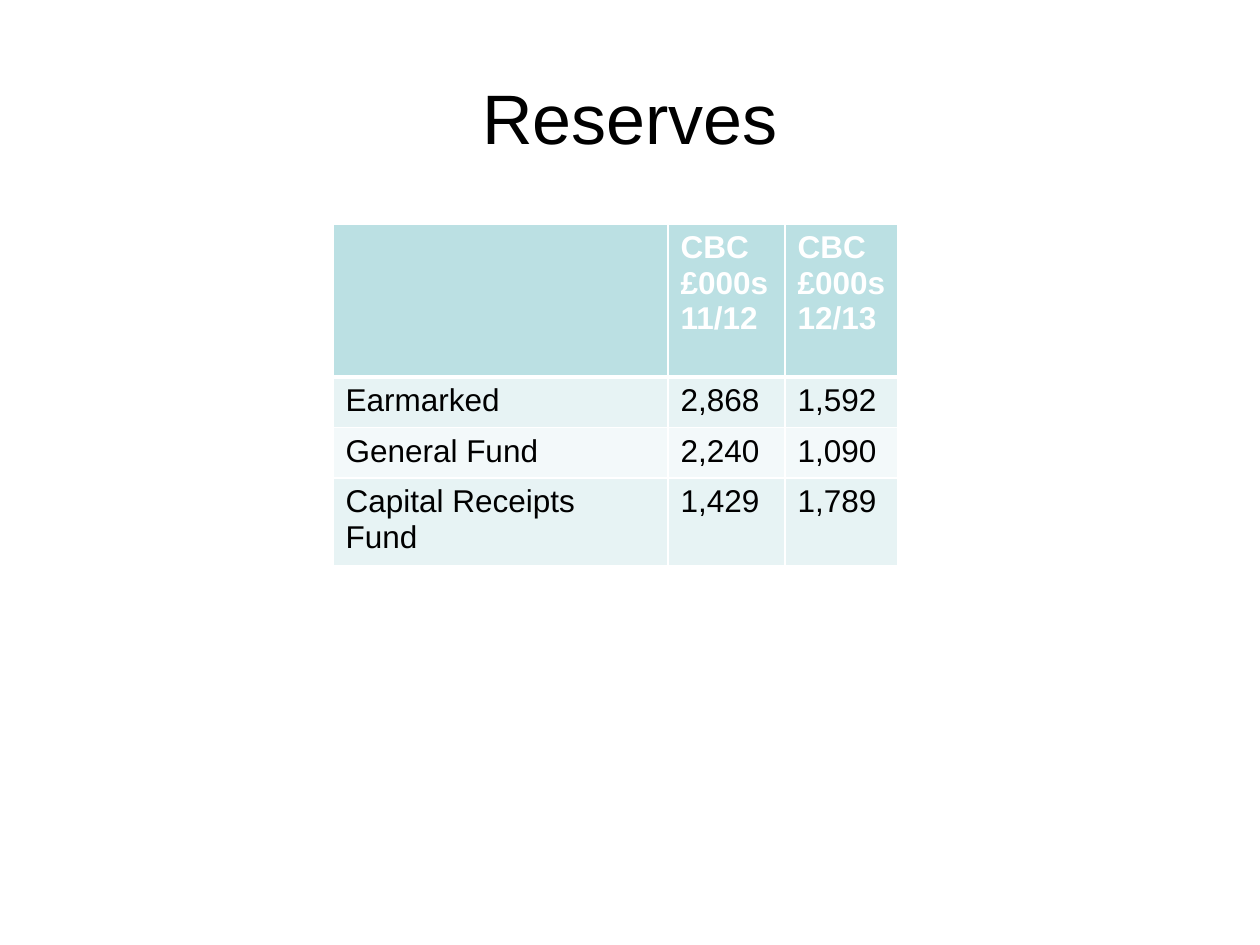
from lxml.etree import SubElement
from pptx import Presentation
from pptx.dml.color import RGBColor
from pptx.enum.text import MSO_ANCHOR as Anchor, PP_ALIGN as Align
from pptx.oxml.ns import qn
from pptx.util import Pt

EMU_PER_PX = 914400 / 126
HEADER = ["", "CBC\n£000s\n11/12", "CBC\n£000s\n12/13"]
RESERVES = [
    ["Earmarked", "2,868", "1,592"],
    ["General Fund", "2,240", "1,090"],
    ["Capital Receipts Fund", "1,429", "1,789"],
]
COLUMN_WIDTHS = [335, 117, 113]
ROW_HEIGHTS = [153, 48, 48, 83]
HEADER_FILL = "BBE0E3"
BAND_FILLS = ["E7F3F4", "F3F9FA"]


def px(length):
    return round(length * EMU_PER_PX)


def color(value):
    return RGBColor.from_string(value)


def write_text(frame, text, size=18, fill="000000", bold=False, align=Align.LEFT):
    frame.word_wrap = True
    frame.text = text
    for paragraph in frame.paragraphs:
        paragraph.alignment = align
        font = paragraph.font
        font.name, font.size, font.bold = "Arial", Pt(size), bold
        font.color.rgb = color(fill)
        for run in paragraph.runs:
            run.font.name = "Arial"


def set_borders(cell, bottom_width):
    """Draw white cell borders; call before filling the cell."""
    properties = cell._tc.get_or_add_tcPr()
    for side, width in (("L", 1), ("R", 1), ("T", 1), ("B", bottom_width)):
        line = SubElement(properties, qn(f"a:ln{side}"), w=str(Pt(width)))
        fill = SubElement(line, qn("a:solidFill"))
        SubElement(fill, qn("a:srgbClr"), val="FFFFFF")


def add_title(slide, left, top, width, height):
    box = slide.shapes.add_textbox(px(left), px(top), px(width), px(height))
    box.text_frame.vertical_anchor = Anchor.MIDDLE
    write_text(box.text_frame, "Reserves", size=40, align=Align.CENTER)


def add_reserves_table(slide, left, top):
    rows = [HEADER] + RESERVES
    shape = slide.shapes.add_table(
        len(rows), len(HEADER), px(left), px(top),
        px(sum(COLUMN_WIDTHS)), px(sum(ROW_HEIGHTS)))
    table = shape.table
    for column, width in zip(table.columns, COLUMN_WIDTHS):
        column.width = px(width)
    for row, height in zip(table.rows, ROW_HEIGHTS):
        row.height = px(height)

    for row_index, values in enumerate(rows):
        is_header = row_index == 0
        fill = HEADER_FILL if is_header else BAND_FILLS[(row_index - 1) % 2]
        for column_index, value in enumerate(values):
            cell = table.cell(row_index, column_index)
            set_borders(cell, bottom_width=3 if is_header else 1)
            cell.fill.solid()
            cell.fill.fore_color.rgb = color(fill)
            write_text(cell.text_frame, value, bold=is_header,
                       fill="FFFFFF" if is_header else "000000")


def main():
    presentation = Presentation()
    presentation.slide_width, presentation.slide_height = px(1260), px(945)
    slide = presentation.slides.add_slide(presentation.slide_layouts[6])
    # Title
    add_title(slide, 63, 38, 1134, 158)
    # Reserves by year
    add_reserves_table(slide, 333, 224)
    presentation.save("out.pptx")


if __name__ == "__main__":
    main()
